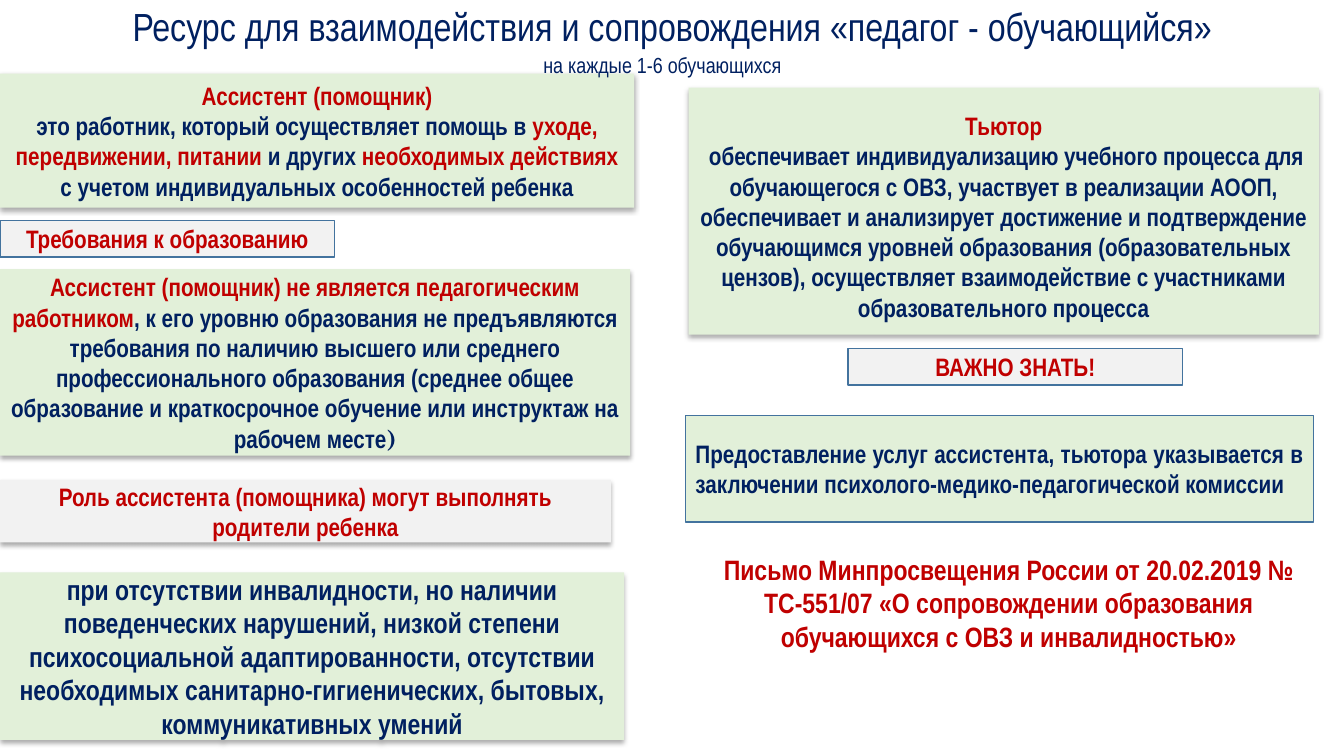
from dataclasses import dataclass
from typing import Optional

from lxml.etree import SubElement
from pptx import Presentation
from pptx.dml.color import RGBColor
from pptx.enum.shapes import MSO_SHAPE
from pptx.enum.text import MSO_ANCHOR, PP_ALIGN
from pptx.oxml.ns import qn
from pptx.util import Inches, Pt


@dataclass(frozen=True)
class Theme:
    font: str = "Arial Narrow"
    serif: str = "TeX Gyre Schola"
    navy: str = "002060"
    red: str = "C00000"
    green: str = "E2F0D9"
    gray: str = "F2F2F2"
    outline: str = "43739E"
    title: float = 28
    subtitle: float = 15.6
    body: float = 18
    large: float = 20


THEME = Theme()


@dataclass(frozen=True)
class Span:
    text: str
    color: str = THEME.navy
    font: str = THEME.font


@dataclass(frozen=True)
class Block:
    """Text in an area; a fill makes it a panel, outlined or else shadowed."""
    left: float
    top: float
    width: float
    height: float
    paragraphs: list[list[Span]]
    fill: Optional[str] = None
    outlined: bool = False
    size: float = THEME.body
    bold: bool = True
    align: PP_ALIGN = PP_ALIGN.CENTER
    anchor: MSO_ANCHOR = MSO_ANCHOR.MIDDLE
    spacing: Optional[float] = None
    top_inset: float = 0.05


def red(text: str) -> Span:
    return Span(text, THEME.red)


def label(left: float, top: float, text: str) -> Block:
    return Block(left, top, 3.32, 0.36, [[red(text)]], THEME.gray, outlined=True)


BLOCKS = [
    Block(0, 0, 13.33, 0.58,
          [[Span("Ресурс для взаимодействия и сопровождения «педагог - обучающийся»")]],
          size=THEME.title, bold=False, spacing=0.9),
    Block(0, 0.73, 6.29, 1.33, [
        [red("Ассистент (помощник)")],
        [Span("это работник, который осуществляет помощь в "),
         red("уходе, передвижении, питании "),
         Span("и других "),
         red("необходимых действиях "),
         Span("с учетом индивидуальных особенностей ребенка")],
    ], THEME.green),
    Block(6.83, 0.87, 6.25, 2.45, [
        [red("Тьютор")],
        [Span(" обеспечивает индивидуализацию учебного процесса для обучающегося с ОВЗ, "
              "участвует в реализации АООП, обеспечивает и анализирует достижение и "
              "подтверждение обучающимся уровней образования (образовательных цензов), "
              "осуществляет взаимодействие с участниками образовательного процесса")],
    ], THEME.green, top_inset=0.15),
    Block(0, 2.67, 6.25, 1.85, [
        [red("Ассистент (помощник) не является педагогическим работником"),
         Span(", к его уровню образования не предъявляются требования по наличию высшего "
              "или среднего профессионального образования (среднее общее образование и "
              "краткосрочное обучение или инструктаж на рабочем месте"),
         Span(")", font=THEME.serif)],
    ], THEME.green),
    label(0, 2.19, "Требования к образованию"),
    Block(0, 4.76, 6.06, 0.62,
          [[red("Роль ассистента (помощника) могут выполнять родители ребенка")]],
          THEME.gray),
    Block(0, 5.68, 6.19, 1.66, [
        [Span("при отсутствии инвалидности, но наличии поведенческих нарушений, низкой "
              "степени психосоциальной адаптированности, отсутствии необходимых "
              "санитарно-гигиенических, бытовых, коммуникативных умений")],
    ], THEME.green, size=THEME.large),
    Block(6.8, 4.12, 6.23, 1.06, [
        [Span("Предоставление услуг ассистента, тьютора указывается в заключении "
              "психолого-медико-педагогической комиссии")],
    ], THEME.green, outlined=True, align=PP_ALIGN.JUSTIFY),
    label(8.41, 3.46, "ВАЖНО ЗНАТЬ!"),
    Block(5.29, 0.4, 5.89, 0.52, [[Span("на каждые 1-6 обучающихся")]],
          size=THEME.subtitle, bold=False, align=PP_ALIGN.LEFT, spacing=0.9),
    Block(6.67, 5.43, 6.67, 1.11, [
        [red("Письмо Минпросвещения России от 20.02.2019 № ТС-551/07 «О сопровождении "
             "образования обучающихся с ОВЗ и инвалидностью»")],
    ], size=THEME.large, anchor=MSO_ANCHOR.TOP),
]


def add_soft_shadow(panel) -> None:
    effects = panel._element.spPr.find(qn("a:effectLst"))
    shadow = SubElement(effects, qn("a:outerShdw"), blurRad=str(Pt(3.5)),
                        dist=str(Pt(2.2)), dir="5400000", algn="t", rotWithShape="0")
    color = SubElement(shadow, qn("a:srgbClr"), val="000000")
    SubElement(color, qn("a:alpha"), val="32000")


def add_panel(slide, block: Block, area: list):
    panel = slide.shapes.add_shape(MSO_SHAPE.RECTANGLE, *area)
    panel.shadow.inherit = False
    panel.fill.solid()
    panel.fill.fore_color.rgb = RGBColor.from_string(block.fill)
    if block.outlined:
        panel.line.color.rgb = RGBColor.from_string(THEME.outline)
        panel.line.width = Pt(1)
    else:
        panel.line.fill.background()
        add_soft_shadow(panel)
    return panel


def write_text(frame, block: Block) -> None:
    frame.word_wrap = True
    frame.vertical_anchor = block.anchor
    frame.margin_top = Inches(block.top_inset)
    for index, spans in enumerate(block.paragraphs):
        paragraph = frame.add_paragraph() if index else frame.paragraphs[0]
        paragraph.alignment = block.align
        paragraph.line_spacing = block.spacing
        for span in spans:
            run = paragraph.add_run()
            run.text = span.text
            run.font.name = span.font
            run.font.size = Pt(block.size)
            run.font.bold = block.bold
            run.font.color.rgb = RGBColor.from_string(span.color)


def add_block(slide, block: Block) -> None:
    area = [Inches(length) for length in (block.left, block.top, block.width, block.height)]
    if block.fill:
        shape = add_panel(slide, block, area)
    else:
        shape = slide.shapes.add_textbox(*area)
    write_text(shape.text_frame, block)


def main() -> None:
    presentation = Presentation()
    presentation.slide_width = Inches(13.33)
    presentation.slide_height = Inches(7.5)
    slide = presentation.slides.add_slide(presentation.slide_layouts[6])
    for block in BLOCKS:
        add_block(slide, block)
    presentation.save("out.pptx")


if __name__ == "__main__":
    main()
